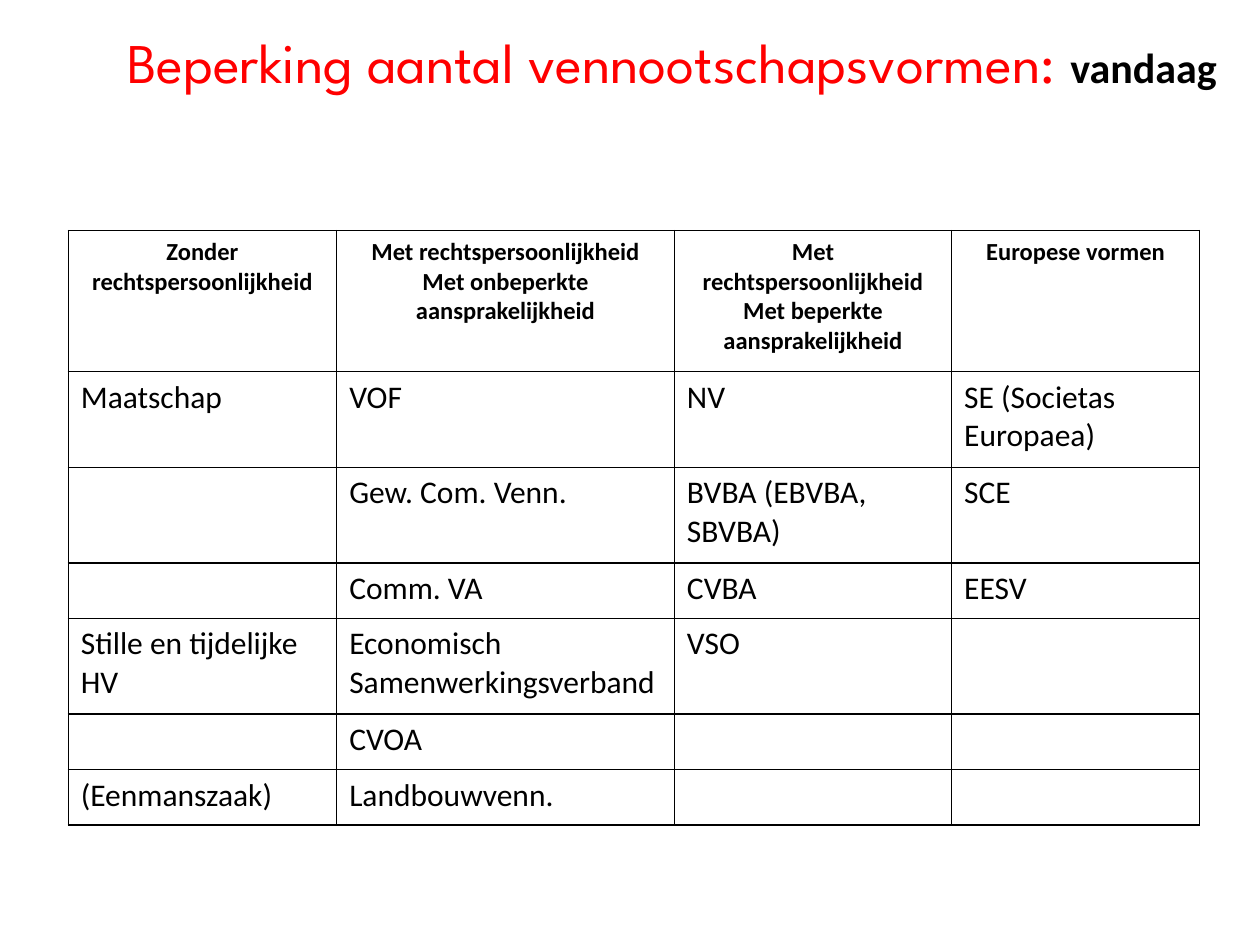
"""Build a slide with a table of the company forms that exist today."""
import pptx
import pptx.dml.color
import pptx.enum.text
import pptx.oxml
import pptx.oxml.ns
import pptx.util

Pt = pptx.util.Pt
ALIGN = pptx.enum.text.PP_ALIGN
RED = pptx.dml.color.RGBColor(255, 0, 0)
BLACK = pptx.dml.color.RGBColor(0, 0, 0)

COLUMN_WIDTHS = [153.4, 193, 158.4, 141.8]
ROW_HEIGHTS = [80.6, 54.7, 54.7, 31.7, 54.7, 31.7, 31.7]
ROWS = [
    ["Zonder rechtspersoonlijkheid",
     "Met rechtspersoonlijkheid\nMet onbeperkte aansprakelijkheid",
     "Met rechtspersoonlijkheid\nMet beperkte aansprakelijkheid",
     "Europese vormen"],
    ["Maatschap", "VOF", "NV", "SE (Societas Europaea)"],
    ["", "Gew. Com. Venn.", "BVBA (EBVBA, SBVBA)", "SCE"],
    ["", "Comm. VA", "CVBA", "EESV"],
    ["Stille en tijdelijke HV", "Economisch Samenwerkingsverband", "VSO", ""],
    ["", "CVOA", "", ""],
    ["(Eenmanszaak)", "Landbouwvenn.", "", ""],
]


def style_font(font, name, size, color, bold=False):
    font.name = name
    font.size = Pt(size)
    font.color.rgb = color
    font.bold = bold


def add_title(slide, left, top, width, height):
    tf = slide.shapes.add_textbox(Pt(left), Pt(top), Pt(width), Pt(height)).text_frame
    tf.word_wrap = True
    tf.vertical_anchor = pptx.enum.text.MSO_ANCHOR.MIDDLE
    p = tf.paragraphs[0]
    p.alignment = ALIGN.CENTER
    for text, *style in [
        ("Beperking aantal vennootschapsvormen: ", "League Spartan", 32, RED),
        ("vandaag", "Calibri", 24, BLACK, True),
    ]:
        r = p.add_run()
        r.text = text
        style_font(r.font, *style)


def set_borders(cell, color, width):
    tc_pr = cell._tc.get_or_add_tcPr()
    for position, side in enumerate(("lnL", "lnR", "lnT", "lnB")):
        tc_pr.insert(position, pptx.oxml.parse_xml(
            f'<a:{side} {pptx.oxml.ns.nsdecls("a")} w="{Pt(width)}">'
            f'<a:solidFill><a:srgbClr val="{color}"/></a:solidFill></a:{side}>'))


def fill_cell(cell, text, header):
    cell.text_frame.text = text
    cell.fill.background()
    set_borders(cell, BLACK, 1)
    for p in cell.text_frame.paragraphs:
        p.alignment = ALIGN.CENTER if header else ALIGN.LEFT
        for r in p.runs:
            style_font(r.font, "Calibri", 14 if header else 18, BLACK, header)


def add_forms_table(slide, left, top):
    table = slide.shapes.add_table(
        len(ROWS), len(COLUMN_WIDTHS), Pt(left), Pt(top),
        Pt(sum(COLUMN_WIDTHS)), Pt(sum(ROW_HEIGHTS))).table
    table.first_row = table.horz_banding = False
    for column, width in zip(table.columns, COLUMN_WIDTHS):
        column.width = Pt(width)
    for i, (row, height) in enumerate(zip(table.rows, ROW_HEIGHTS)):
        row.height = Pt(height)
        for cell, text in zip(row.cells, ROWS[i]):
            fill_cell(cell, text, header=i == 0)


def main():
    prs = pptx.Presentation()
    prs.slide_width, prs.slide_height = Pt(720), Pt(540)
    slide = prs.slides.add_slide(prs.slide_layouts[6])
    add_title(slide, 48, 9.5, 672, 51)
    add_forms_table(slide, 39, 131.8)
    prs.save("out.pptx")


if __name__ == "__main__":
    main()
